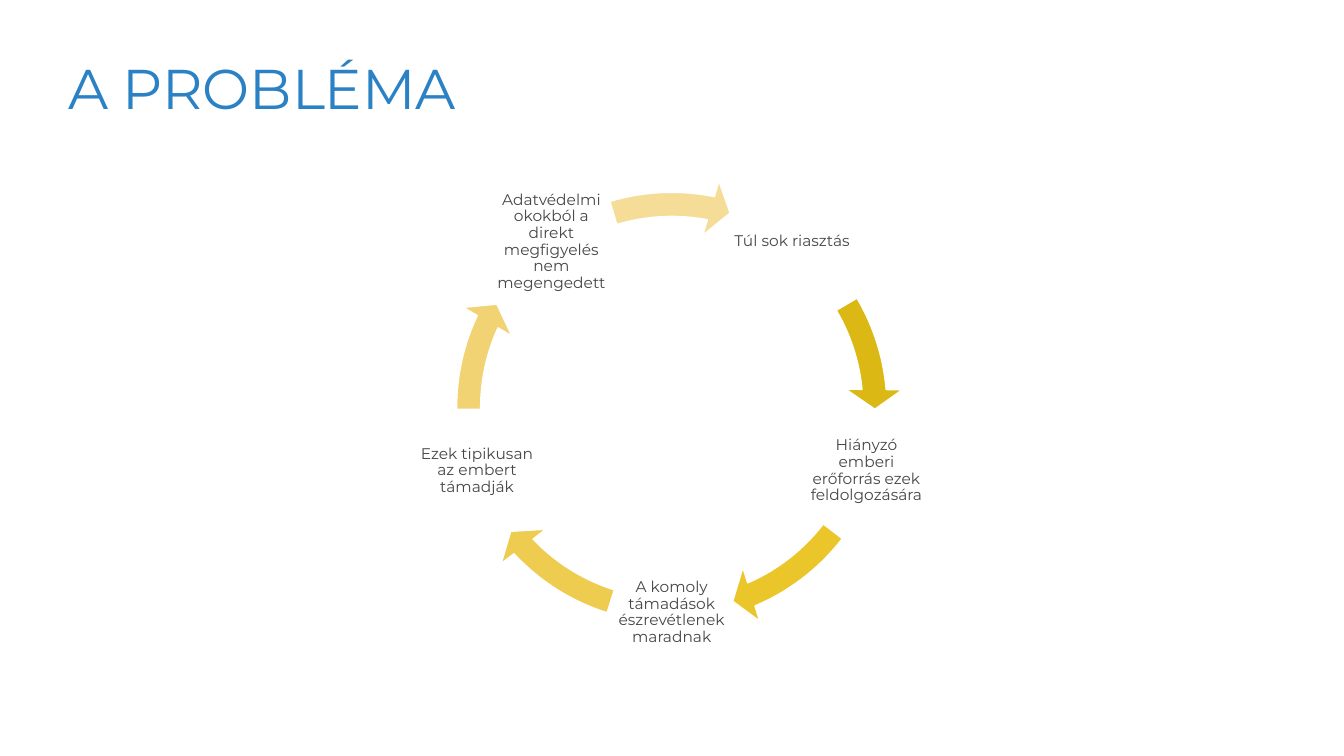
import math

import pptx
import pptx.dml.color
import pptx.enum.shapes
import pptx.enum.text
import pptx.util

Cm = pptx.util.Cm
Pt = pptx.util.Pt
RGBColor = pptx.dml.color.RGBColor
Align = pptx.enum.text.PP_ALIGN
Anchor = pptx.enum.text.MSO_ANCHOR

BLUE = RGBColor(0x2A, 0x81, 0xC4)
GREY = RGBColor(0x46, 0x46, 0x46)
WHITE = RGBColor(0xFF, 0xFF, 0xFF)
GOLD = RGBColor(0xDB, 0xB8, 0x14)
YELLOW = RGBColor(0xEB, 0xC6, 0x2B)
AMBER = RGBColor(0xEE, 0xCC, 0x4F)
SAND = RGBColor(0xF2, 0xD3, 0x74)
CREAM = RGBColor(0xF5, 0xDD, 0x98)

CENTER_X, CENTER_Y = 16.93, 10.27
RADIUS = 5.16
LABEL_SIZE = 3.1
ARROW_SIZE = 11.66
ADJUSTMENT_PER_DEGREE = 0.6

STEPS = [
    ("Túl sok riasztás", GOLD, 329.43, 354.9),
    ("Hiányzó emberi erőforrás ezek feldolgozására", YELLOW, 37.54, 66.93),
    ("A komoly támadások észrevétlenek maradnak", AMBER, 107.48, 136.86),
    ("Ezek tipikusan az embert támadják", SAND, 179.5, 204.98),
    ("Adatvédelmi okokból a direkt megfigyelés nem megengedett", CREAM, 253.3, 281.11),
]


class CycleSlide:
    font_name = "Montserrat"
    line_spacing = 0.9

    def __init__(self, slide):
        self.slide = slide

    def text(self, words, left, top, width, height, size, color,
             align=Align.LEFT, anchor=Anchor.TOP, inset=(0.25, 0.13)):
        shape = self.slide.shapes.add_textbox(Cm(left), Cm(top), Cm(width), Cm(height))
        frame = shape.text_frame
        frame.word_wrap = True
        frame.vertical_anchor = anchor
        frame.margin_left = frame.margin_right = Cm(inset[0])
        frame.margin_top = frame.margin_bottom = Cm(inset[1])
        paragraph = frame.paragraphs[0]
        paragraph.text = words
        paragraph.alignment = align
        paragraph.line_spacing = self.line_spacing
        paragraph.font.name = self.font_name
        paragraph.font.size = Pt(size)
        paragraph.font.color.rgb = color

    def title(self, words):
        self.text(words, 1.47, 1.4, 29.29, 3.33, 40, BLUE)

    def label(self, words, angle):
        x = CENTER_X + RADIUS * math.cos(math.radians(angle))
        y = CENTER_Y + RADIUS * math.sin(math.radians(angle))
        self.text(words, x - LABEL_SIZE / 2, y - LABEL_SIZE / 2, LABEL_SIZE, LABEL_SIZE,
                  11, GREY, Align.CENTER, Anchor.MIDDLE, (0.05, 0.05))

    def arrow(self, color, start, end):
        shape = self.slide.shapes.add_shape(
            pptx.enum.shapes.MSO_SHAPE.CIRCULAR_ARROW,
            Cm(CENTER_X - ARROW_SIZE / 2), Cm(CENTER_Y - ARROW_SIZE / 2),
            Cm(ARROW_SIZE), Cm(ARROW_SIZE))
        angles = [degrees * ADJUSTMENT_PER_DEGREE for degrees in (5.6, end, start)]
        for index, value in enumerate([0.052, *angles, 0.061]):
            shape.adjustments[index] = value
        shape.shadow.inherit = False
        shape.fill.solid()
        shape.fill.fore_color.rgb = color
        shape.line.color.rgb = WHITE
        shape.line.width = Pt(1)


def main():
    presentation = pptx.Presentation()
    presentation.slide_width = Cm(33.87)
    presentation.slide_height = Cm(19.05)
    cycle = CycleSlide(presentation.slides.add_slide(presentation.slide_layouts[6]))
    cycle.title("A PROBLÉMA")
    for index, (words, color, start, end) in enumerate(STEPS):
        cycle.label(words, -54 + index * 360 / len(STEPS))
        cycle.arrow(color, start, end)
    presentation.save("out.pptx")


if __name__ == "__main__":
    main()
